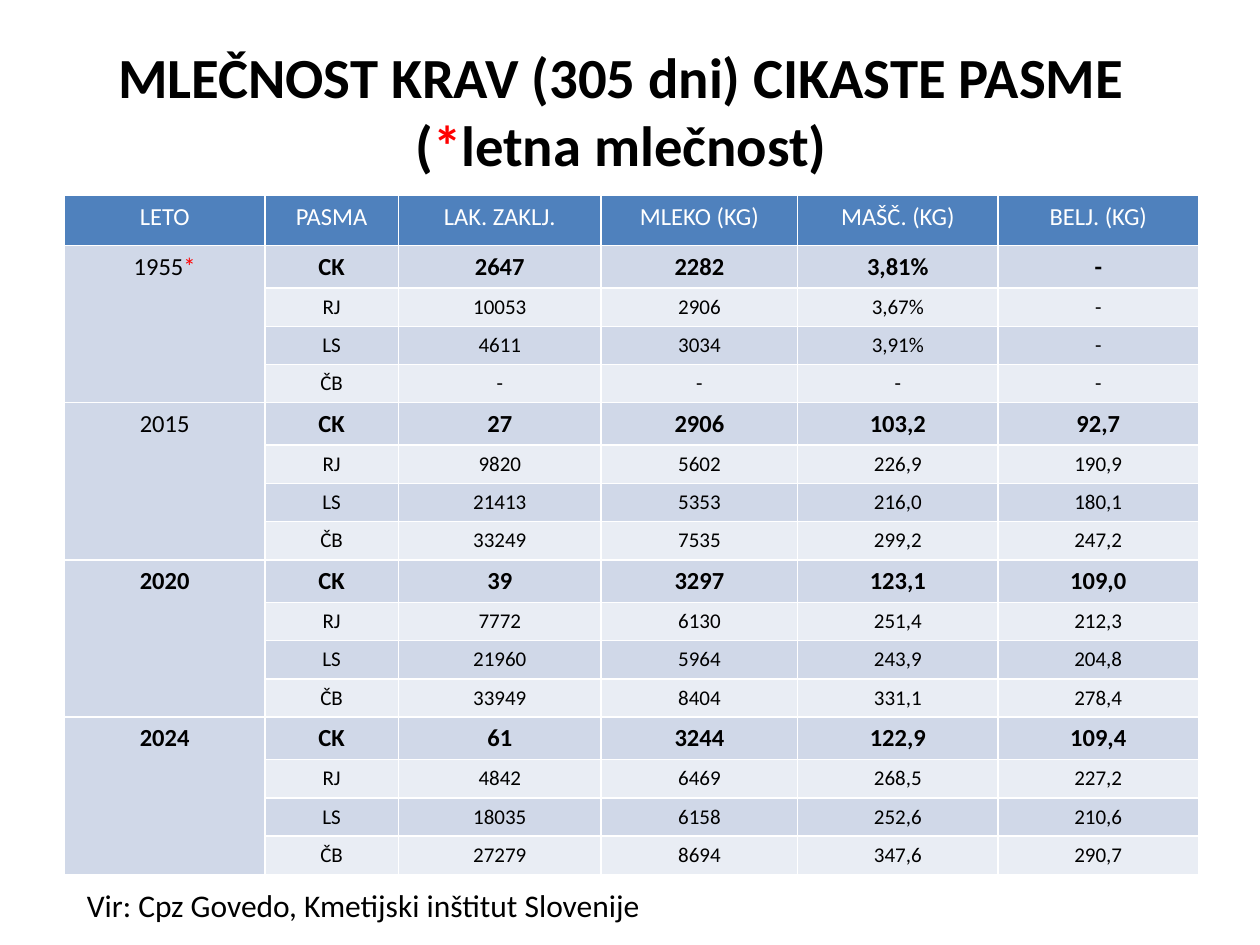
from pptx import Presentation
from pptx.dml.color import RGBColor
from pptx.enum.text import MSO_ANCHOR, MSO_AUTO_SIZE, PP_ALIGN
from pptx.util import Cm, Pt

CENTER = PP_ALIGN.CENTER
LEFT = PP_ALIGN.LEFT
MIDDLE = MSO_ANCHOR.MIDDLE
NO_AUTOFIT = MSO_AUTO_SIZE.NONE
FIT_SHAPE = MSO_AUTO_SIZE.SHAPE_TO_FIT_TEXT

BLACK = RGBColor(0x00, 0x00, 0x00)
WHITE = RGBColor(0xFF, 0xFF, 0xFF)
RED = RGBColor(0xFF, 0x00, 0x00)
HEADER_BLUE = RGBColor(0x4F, 0x81, 0xBD)
BAND_DARK = RGBColor(0xD0, 0xD8, 0xE8)
BAND_LIGHT = RGBColor(0xE9, 0xED, 0xF4)

TITLE_ONLY = 5
HEADINGS = ["LETO", "PASMA", "LAK. ZAKLJ.", "MLEKO (KG)", "MAŠČ. (KG)", "BELJ. (KG)"]
COLUMN_WIDTHS = [4.04, 2.69, 4.09, 3.96, 4.04, 4.04]
HEADER_HEIGHT, LEAD_HEIGHT, ROW_HEIGHT = 1.01, 0.85, 0.77
BREEDS = ["CK", "RJ", "LS", "ČB"]

# Year, whether it is bold, and one line of values per breed
YEARS = [
    ("1955*", False, ["2647 2282 3,81% -", "10053 2906 3,67% -",
                      "4611 3034 3,91% -", "- - - -"]),
    ("2015", False, ["27 2906 103,2 92,7", "9820 5602 226,9 190,9",
                     "21413 5353 216,0 180,1", "33249 7535 299,2 247,2"]),
    ("2020", True, ["39 3297 123,1 109,0", "7772 6130 251,4 212,3",
                    "21960 5964 243,9 204,8", "33949 8404 331,1 278,4"]),
    ("2024", True, ["61 3244 122,9 109,4", "4842 6469 268,5 227,2",
                    "18035 6158 252,6 210,6", "27279 8694 347,6 290,7"]),
]


class SlideBuilder:
    def __init__(self, slide, font_name="Calibri"):
        self.slide = slide
        self.font_name = font_name

    def fill_paragraph(self, paragraph, text, size, color=BLACK, bold=False, align=CENTER):
        """Add the text; an asterisk becomes a red run, a newline a line break."""
        paragraph.alignment = align
        font = paragraph.font
        font.name, font.size, font.bold = self.font_name, Pt(size), bold
        font.color.rgb = color
        before, star, after = text.partition("*")
        for part, part_color in ((before, color), (star, RED), (after, color)):
            for index, line in enumerate(part.split("\n")):
                if index:
                    paragraph.add_line_break()
                if line:
                    run = paragraph.add_run()
                    run.text = line
                    if star:
                        run.font.color.rgb = part_color

    def title(self, text, left, top, width, height, size):
        shape = self.slide.shapes.title
        shape.left, shape.top = Cm(left), Cm(top)
        shape.width, shape.height = Cm(width), Cm(height)
        frame = shape.text_frame
        frame.auto_size = NO_AUTOFIT
        frame.vertical_anchor = MIDDLE
        self.fill_paragraph(frame.paragraphs[0], text, size, bold=True)

    def text(self, text, left, top, width, height, size):
        shape = self.slide.shapes.add_textbox(Cm(left), Cm(top), Cm(width), Cm(height))
        frame = shape.text_frame
        frame.word_wrap = False
        frame.auto_size = FIT_SHAPE
        self.fill_paragraph(frame.paragraphs[0], text, size, align=LEFT)

    def cell(self, cell, text, fill, size=14, color=BLACK, bold=False):
        cell.fill.solid()
        cell.fill.fore_color.rgb = fill
        self.fill_paragraph(cell.text_frame.paragraphs[0], text, size, color, bold)

    def milk_table(self, left, top):
        group_size = len(BREEDS)
        group_heights = [LEAD_HEIGHT] + [ROW_HEIGHT] * (group_size - 1)
        heights = [HEADER_HEIGHT] + group_heights * len(YEARS)
        table = self.slide.shapes.add_table(
            len(heights), len(HEADINGS), Cm(left), Cm(top),
            Cm(sum(COLUMN_WIDTHS)), Cm(sum(heights))).table
        for column, width in zip(table.columns, COLUMN_WIDTHS):
            column.width = Cm(width)
        for row, height in zip(table.rows, heights):
            row.height = Cm(height)

        for column, heading in enumerate(HEADINGS):
            self.cell(table.cell(0, column), heading, HEADER_BLUE, color=WHITE)
        for group, (year, year_bold, lines) in enumerate(YEARS):
            first = 1 + group * group_size
            year_cell = table.cell(first, 0)
            year_cell.merge(table.cell(first + group_size - 1, 0))
            self.cell(year_cell, year, BAND_DARK, bold=year_bold)
            for offset, (breed, line) in enumerate(zip(BREEDS, lines)):
                lead = offset == 0
                fill = BAND_LIGHT if offset % 2 else BAND_DARK
                for column, value in enumerate([breed] + line.split(), start=1):
                    self.cell(table.cell(first + offset, column), value, fill,
                              size=14 if lead else 12, bold=lead)


def main():
    presentation = Presentation()
    presentation.slide_width, presentation.slide_height = Cm(25.4), Cm(19.05)
    slide = presentation.slides.add_slide(presentation.slide_layouts[TITLE_ONLY])
    builder = SlideBuilder(slide)
    builder.title("MLEČNOST KRAV (305 dni) CIKASTE PASME\n(*letna mlečnost)",
                  1.09, 0.91, 22.86, 2.59, 32.4)
    builder.milk_table(1.3, 3.94)
    builder.text("Vir: Cpz Govedo, Kmetijski inštitut Slovenije",
                 1.5, 17.73, 11.79, 1.02, 18)
    presentation.save("out.pptx")


if __name__ == "__main__":
    main()
